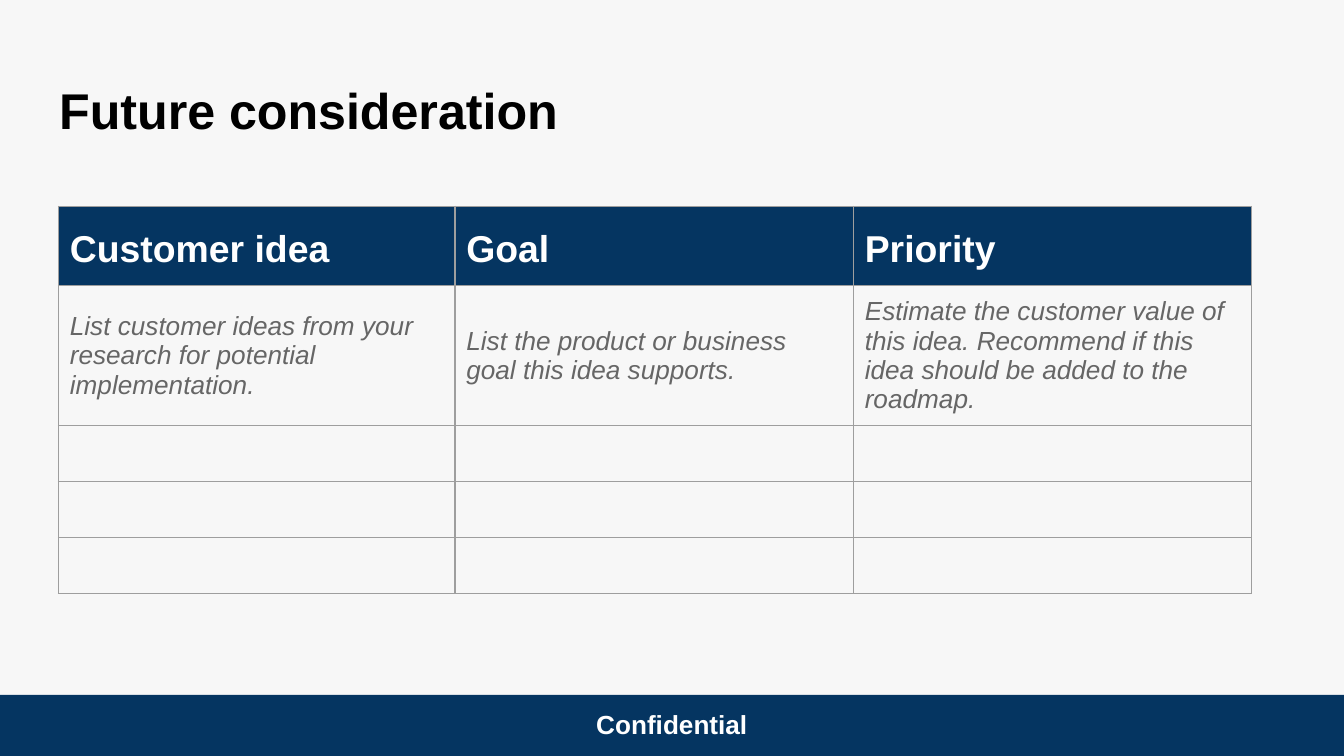
from dataclasses import dataclass

from lxml import etree
from pptx import Presentation
from pptx.dml.color import RGBColor
from pptx.enum.shapes import MSO_SHAPE
from pptx.enum.text import MSO_ANCHOR, MSO_AUTO_SIZE, PP_ALIGN
from pptx.oxml.ns import qn
from pptx.util import Emu, Pt

RECT = MSO_SHAPE.RECTANGLE
TOP, MIDDLE = MSO_ANCHOR.TOP, MSO_ANCHOR.MIDDLE
LEFT, CENTER = PP_ALIGN.LEFT, PP_ALIGN.CENTER
NO_FIT = MSO_AUTO_SIZE.NONE

SCALE = 4572  # EMU per px, 200 px to the inch
WIDE, HIGH = 2000, 1125
COLORS = {
    "back": "F7F7F7",
    "navy": "053561",
    "white": "FFFFFF",
    "black": "000000",
    "text": "666666",
    "line": "9E9E9E",
}


@dataclass(frozen=True)
class Style:
    size: float
    color: str
    bold: bool = False
    italic: bool = False


TITLE = Style(26.9, "black", bold=True)
HEAD = Style(20, "white", bold=True)
HINT = Style(14, "text", italic=True)
FOOT = Style(14, "white", bold=True)

COLS = (590, 593, 592)
ROWS = (118, 208, 83, 83, 83)
HEADS = ("Customer idea", "Goal", "Priority")
HINTS = (
    "List customer ideas from your research for potential implementation.",
    "List the product or business goal this idea supports.",
    "Estimate the customer value of this idea. Recommend if this idea "
    "should be added to the roadmap.",
)


def px(value: int) -> Emu:
    return Emu(value * SCALE)


def rgb(name: str) -> RGBColor:
    return RGBColor.from_string(COLORS[name])


def write(para, text: str, style: Style, align=LEFT) -> None:
    para.text = text
    para.alignment = align
    font = para.font
    font.name, font.size = "Arial", Pt(style.size)
    font.bold, font.italic = style.bold, style.italic
    font.color.rgb = rgb(style.color)


def inset(frame, anchor) -> None:
    frame.margin_left = frame.margin_right = px(20)
    frame.margin_top = frame.margin_bottom = px(20)
    frame.word_wrap = True
    frame.auto_size = NO_FIT
    frame.vertical_anchor = anchor


def border(cell) -> None:
    props = cell._tc.get_or_add_tcPr()
    for spot, side in enumerate(("lnL", "lnR", "lnT", "lnB")):
        line = etree.Element(qn(f"a:{side}"), w=str(Pt(0.75)))
        fill = etree.SubElement(line, qn("a:solidFill"))
        etree.SubElement(fill, qn("a:srgbClr"), val=COLORS["line"])
        props.insert(spot, line)


def fill_cell(cell, text: str, head: bool) -> None:
    cell.margin_left = cell.margin_right = px(17)
    cell.margin_top = cell.margin_bottom = px(17)
    cell.vertical_anchor = MIDDLE
    para = cell.text_frame.paragraphs[0]
    write(para, text, HEAD if head else HINT)
    if head:
        para.line_spacing, para.space_before = 1.15, Pt(12)
        cell.fill.solid()
        cell.fill.fore_color.rgb = rgb("navy")
    else:
        cell.fill.background()
    if not text:  # keeps blank rows at their height
        etree.SubElement(para._p, qn("a:endParaRPr"), sz="1400")
    border(cell)


def add_grid(slide) -> None:
    frame = slide.shapes.add_table(
        len(ROWS), len(COLS), px(87), px(307), px(sum(COLS)), px(sum(ROWS))
    )
    table = frame.table
    table.first_row = table.horz_banding = False
    for col, width in zip(table.columns, COLS):
        col.width = px(width)
    blank = ("",) * len(COLS)
    texts = [HEADS, HINTS] + [blank] * (len(ROWS) - 2)
    for r, (height, line) in enumerate(zip(ROWS, texts)):
        table.rows[r].height = px(height)
        for c, text in enumerate(line):
            fill_cell(table.cell(r, c), text, r == 0)


def add_foot(slide) -> None:
    group = slide.shapes.add_group_shape()
    top = 1034
    bar = group.shapes.add_shape(RECT, px(0), px(top), px(WIDE), px(HIGH - top))
    bar.shadow.inherit = False
    bar.fill.solid()
    bar.fill.fore_color.rgb = rgb("navy")
    bar.line.fill.background()
    label = group.shapes.add_textbox(px(0), px(top), px(WIDE), px(84))
    inset(label.text_frame, TOP)
    write(label.text_frame.paragraphs[0], "Confidential", FOOT, CENTER)


def main() -> None:
    deck = Presentation()
    deck.slide_width, deck.slide_height = px(WIDE), px(HIGH)
    slide = deck.slides.add_slide(deck.slide_layouts[5])
    slide.background.fill.solid()
    slide.background.fill.fore_color.rgb = rgb("back")

    # Title
    title = slide.shapes.title
    title.left, title.top = px(68), px(98)
    title.width, title.height = px(1864), px(126)
    inset(title.text_frame, TOP)
    write(title.text_frame.paragraphs[0], "Future consideration", TITLE)

    # Table and footer
    add_grid(slide)
    add_foot(slide)
    deck.save("out.pptx")


if __name__ == "__main__":
    main()
